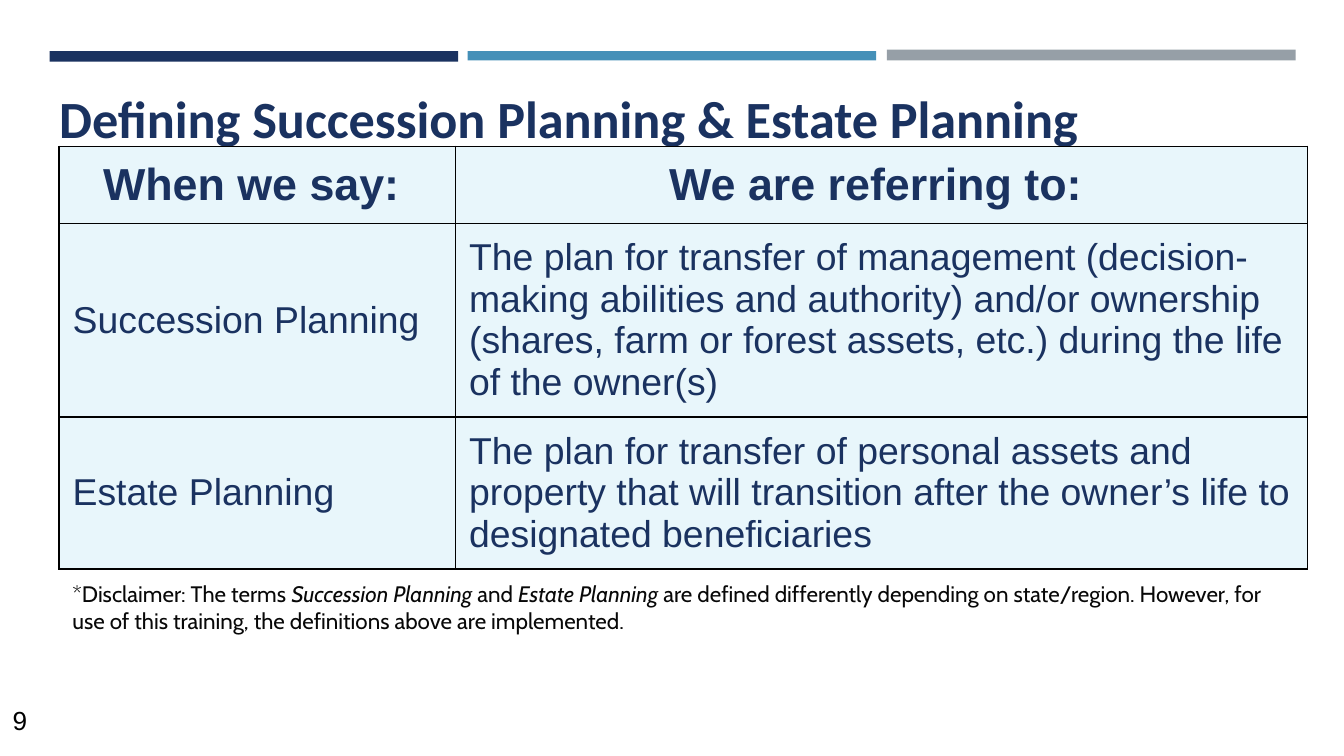
from dataclasses import dataclass

from lxml.etree import SubElement
from pptx import Presentation
from pptx.dml.color import RGBColor
from pptx.enum.shapes import MSO_SHAPE as Shape
from pptx.enum.text import MSO_ANCHOR as Anchor, MSO_AUTO_SIZE as AutoSize, PP_ALIGN as Align
from pptx.oxml.ns import qn
from pptx.util import Inches, Pt

NAVY = RGBColor(0x1A, 0x32, 0x60)
BLUE = RGBColor(0x45, 0x90, 0xB8)
GREY = RGBColor(0x96, 0x9F, 0xA7)
PALE_BLUE = RGBColor(0xE8, 0xF6, 0xFB)
NEAR_BLACK = RGBColor(0x08, 0x08, 0x08)
BLACK = RGBColor(0, 0, 0)


@dataclass
class Style:
    size: float
    color: RGBColor
    font: str = "Arial"
    bold: bool = False


@dataclass
class Bar:
    left: float
    top: float
    height: float
    color: RGBColor


@dataclass
class Row:
    height: float
    cells: tuple[str, str]


TITLE_STYLE = Style(28, NAVY, "Calibri", True)
HEADER_STYLE = Style(24, NAVY, bold=True)
BODY_STYLE = Style(20, NAVY)
DISCLAIMER_STYLE = Style(12, NEAR_BLACK, "Cabin")
NUMBER_STYLE = Style(14, BLACK)

BAR_WIDTH = 3.04
BARS = [
    Bar(0.37, 0.38, 0.08, NAVY),
    Bar(3.48, 0.38, 0.07, BLUE),
    Bar(6.6, 0.37, 0.08, GREY),
]
COLUMN_WIDTHS = [2.95, 6.34]
ROWS = [
    Row(0.57, ("When we say: ", "We are referring to: ")),
    Row(1.44, ("Succession Planning",
               "The plan for transfer of management (decision-making abilities and "
               "authority) and/or ownership (shares, farm or forest assets, etc.) "
               "during the life of the owner(s)")),
    Row(1.13, ("Estate Planning",
               "The plan for transfer of personal assets and property that will "
               "transition after the owner’s life to designated beneficiaries")),
]
# Disclaimer wording, with italic flags
DISCLAIMER = [
    ("*Disclaimer: The terms ", False),
    ("Succession Planning ", True),
    ("and", False),
    (" Estate Planning ", True),
    ("are defined differently depending on state/region. However, for use of this "
     "training, the definitions above are implemented.", False),
]


def add_run(paragraph, text: str, style: Style, italic: bool = False) -> None:
    run = paragraph.add_run()
    run.text = text
    run.font.name = style.font
    run.font.size = Pt(style.size)
    run.font.bold = style.bold
    run.font.italic = italic
    run.font.color.rgb = style.color


def set_margins(target, horizontal: float = 0.1, vertical: float = 0.1) -> None:
    target.margin_left = target.margin_right = Inches(horizontal)
    target.margin_top = target.margin_bottom = Inches(vertical)


def add_bar(slide, bar: Bar) -> None:
    shape = slide.shapes.add_shape(Shape.RECTANGLE, Inches(bar.left), Inches(bar.top),
                                   Inches(BAR_WIDTH), Inches(bar.height))
    shape.shadow.inherit = False
    shape.fill.solid()
    shape.fill.fore_color.rgb = bar.color
    shape.line.fill.background()


def set_title(slide, text: str) -> None:
    title = slide.shapes.title
    title.left, title.top = Inches(0.17), Inches(0.47)
    title.width, title.height = Inches(9.55), Inches(0.76)
    frame = title.text_frame
    frame.auto_size = AutoSize.NONE
    frame.vertical_anchor = Anchor.TOP
    set_margins(frame)
    frame.margin_left = Inches(0.27)
    paragraph = frame.paragraphs[0]
    paragraph.alignment = Align.LEFT
    paragraph.line_spacing = 1.15
    add_run(paragraph, text, TITLE_STYLE)


def add_borders(cell) -> None:
    properties = cell._tc.get_or_add_tcPr()
    for side in ("lnL", "lnR", "lnT", "lnB"):
        line = SubElement(properties, qn(f"a:{side}"), w=str(Pt(1)))
        fill = SubElement(line, qn("a:solidFill"))
        SubElement(fill, qn("a:srgbClr"), val=str(BLACK))


def format_cell(cell, text: str, is_header: bool) -> None:
    add_borders(cell)
    cell.fill.solid()
    cell.fill.fore_color.rgb = PALE_BLUE
    cell.vertical_anchor = Anchor.MIDDLE
    set_margins(cell)
    paragraph = cell.text_frame.paragraphs[0]
    paragraph.alignment = Align.CENTER if is_header else Align.LEFT
    add_run(paragraph, text, HEADER_STYLE if is_header else BODY_STYLE)


def add_definitions(slide) -> None:
    height = sum(row.height for row in ROWS)
    table = slide.shapes.add_table(len(ROWS), len(COLUMN_WIDTHS), Inches(0.44), Inches(1.09),
                                   Inches(sum(COLUMN_WIDTHS)), Inches(height)).table
    table.first_row = table.horz_banding = False
    for column, width in zip(table.columns, COLUMN_WIDTHS):
        column.width = Inches(width)
    for index, row in enumerate(ROWS):
        table.rows[index].height = Inches(row.height)
        for cell, text in zip(table.rows[index].cells, row.cells):
            format_cell(cell, text, is_header=index == 0)


def add_text_box(slide, left: float, top: float, width: float, height: float,
                 vertical_margin: float = 0.1):
    box = slide.shapes.add_textbox(Inches(left), Inches(top), Inches(width), Inches(height))
    box.text_frame.word_wrap = True
    set_margins(box.text_frame, vertical=vertical_margin)
    return box.text_frame.paragraphs[0]


def main() -> None:
    # Widescreen page, 16:9
    presentation = Presentation()
    presentation.slide_width = Inches(10)
    presentation.slide_height = Inches(10) * 9 // 16
    slide = presentation.slides.add_slide(presentation.slide_layouts.get_by_name("Title Only"))

    # Heading
    for bar in BARS:
        add_bar(slide, bar)
    set_title(slide, "Defining Succession Planning & Estate Planning")

    # Definitions and disclaimer
    add_definitions(slide)
    disclaimer = add_text_box(slide, 0.44, 4.22, 9.28, 0.63)
    for text, italic in DISCLAIMER:
        add_run(disclaimer, text, DISCLAIMER_STYLE, italic)

    # Slide number
    number = add_text_box(slide, -0.3, 5.19, 0.6, 0.43, vertical_margin=0.05)
    number.alignment = Align.RIGHT
    add_run(number, "9", NUMBER_STYLE)

    presentation.save("out.pptx")


if __name__ == "__main__":
    main()
